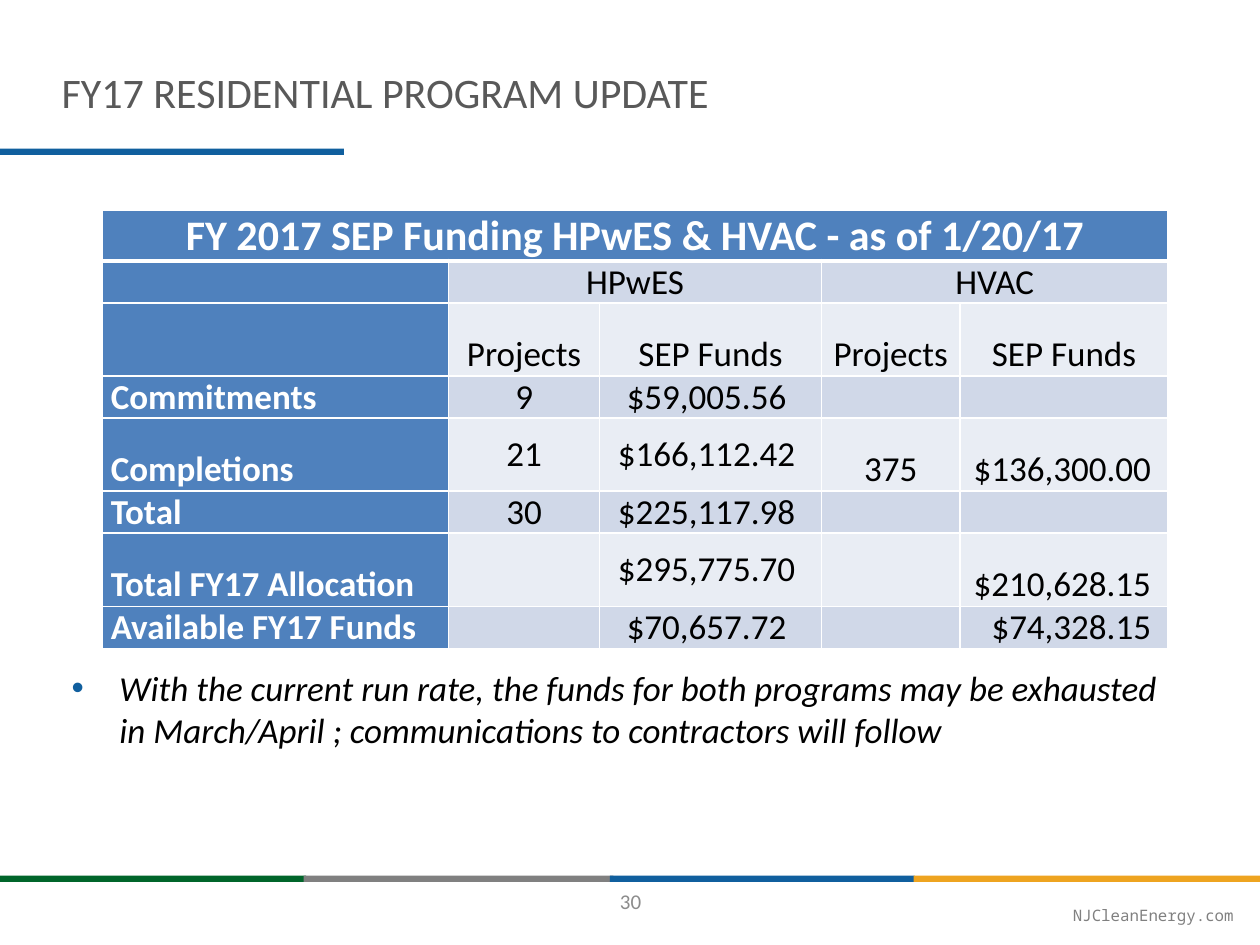
"""Build the FY17 residential program update slide."""
import lxml.etree
import pptx
import pptx.dml.color
import pptx.enum.shapes
import pptx.enum.text
import pptx.oxml
import pptx.oxml.ns
import pptx.util

Inches = pptx.util.Inches
Pt = pptx.util.Pt
RGB = pptx.dml.color.RGBColor.from_string
Align = pptx.enum.text.PP_ALIGN
Anchor = pptx.enum.text.MSO_ANCHOR

COLORS = {
    "green": "00652A", "gray": "808080", "blue": "105F9E", "orange": "EEA420",
    "title": "595959", "number": "8C8C8C", "black": "000000", "white": "FFFFFF",
    "header": "4F81BD", "band": "D0D8E8", "light": "E9EDF4",
}


def write(paragraph, text, size, color, alignment=Align.LEFT, **formats):
    run = paragraph.add_run()
    run.text = text
    paragraph.alignment = alignment
    values = {"name": "Calibri", "size": Pt(size), "bold": False} | formats
    for attribute, value in values.items():
        setattr(run.font, attribute, value)
    run.font.color.rgb = RGB(COLORS[color])


def add_border(cell, side, width):
    properties = cell._tc.get_or_add_tcPr()
    line = lxml.etree.SubElement(properties, pptx.oxml.ns.qn(f"a:ln{side}"), w=str(Pt(width)))
    fill = lxml.etree.SubElement(line, pptx.oxml.ns.qn("a:solidFill"))
    lxml.etree.SubElement(fill, pptx.oxml.ns.qn("a:srgbClr"), val=COLORS["white"])


presentation = pptx.Presentation()
presentation.slide_width, presentation.slide_height = Inches(10), Inches(7.5)
slide = presentation.slides.add_slide(presentation.slide_layouts[6])

bars = [
    (0, 6.95, 2.43, "green"),
    (2.41, 6.95, 2.46, "gray"),
    (4.84, 6.95, 2.42, "blue"),
    (7.25, 6.95, 2.75, "orange"),
    (0, 1.18, 2.73, "blue"),
]
for left, top, width, color in bars:
    bar = slide.shapes.add_shape(
        pptx.enum.shapes.MSO_SHAPE.RECTANGLE,
        Inches(left), Inches(top), Inches(width), Inches(0.05))
    bar.shadow.inherit = False
    bar.fill.solid()
    bar.fill.fore_color.rgb = RGB(COLORS[color])
    bar.line.fill.background()

boxes = {
    "website": (-0.21, 7.16, 10, 0.17),
    "title": (0.39, 0.48, 6.28, 0.74),
    "number": (3.88, 6.95, 2.25, 0.4),
    "note": (0.47, 5.24, 9, 1),
}
frames = {}
for name, bounds in boxes.items():
    frames[name] = slide.shapes.add_textbox(*map(Inches, bounds)).text_frame
    frames[name].word_wrap = True

for side in ("left", "top", "right", "bottom"):
    setattr(frames["website"], f"margin_{side}", 0)
website = frames["website"].paragraphs[0]
website.line_spacing = 1.2
write(website, "NJCleanEnergy.com", 9, "gray", Align.RIGHT, name="Noto Sans Mono")

write(frames["title"].paragraphs[0], "FY17 RESIDENTIAL PROGRAM UPDATE", 24, "title")

frames["number"].vertical_anchor = Anchor.MIDDLE
write(frames["number"].paragraphs[0], "30", 12, "number", Align.CENTER)

note = frames["note"].paragraphs[0]
note_properties = note._p.get_or_add_pPr()
note_properties.set("marL", str(Inches(0.38)))
note_properties.set("indent", str(Inches(-0.38)))
namespace = pptx.oxml.ns.nsdecls("a")
for bullet in (
    f'<a:buClr {namespace}><a:srgbClr val="{COLORS["blue"]}"/></a:buClr>',
    f'<a:buFont {namespace} typeface="Arial"/>',
    f'<a:buChar {namespace} char="•"/>',
):
    note_properties.append(pptx.oxml.parse_xml(bullet))
write(note, "With the current run rate, the funds for both programs may be exhausted "
      "in March/April ; communications to contractors will follow", 20, "black", italic=True)

rows = [
    ["FY 2017 SEP Funding HPwES & HVAC - as of 1/20/17", "", "", "", ""],
    ["", "HPwES", "", "HVAC", ""],
    ["", "Projects", "SEP Funds", "Projects", "SEP Funds"],
    ["Commitments", "9", "$59,005.56 ", "", ""],
    ["Completions", "21", "$166,112.42 ", "375", "$136,300.00 "],
    ["Total", "30", "$225,117.98 ", "", ""],
    ["Total FY17 Allocation", "", "$295,775.70 ", "", "$210,628.15 "],
    ["Available FY17 Funds", "", "$70,657.72 ", "", "$74,328.15 "],
]
column_widths = [2.75, 1.2, 1.76, 1.1, 1.65]
tall_rows = (2, 4, 6)
table = slide.shapes.add_table(
    len(rows), len(column_widths), Inches(0.81), Inches(1.67), Inches(8.46), Inches(3.47)).table
for column, width in zip(table.columns, column_widths):
    column.width = Inches(width)

for row_index, texts in enumerate(rows):
    table.rows[row_index].height = Inches(0.58 if row_index in tall_rows else 0.33)
    for column_index, text in enumerate(texts):
        cell = table.cell(row_index, column_index)
        is_title = row_index == 0
        is_header = is_title or column_index == 0
        is_data = row_index >= 3
        margins = {"left": 0.07, "top": 0, "right": 0.07, "bottom": 0}
        for side, margin in margins.items():
            setattr(cell, f"margin_{side}", Inches(margin))
        for side in "LRTB":
            under_title = (row_index, side) in ((0, "B"), (1, "T"))
            add_border(cell, side, 3 if under_title else 1)
        band = "light" if row_index in tall_rows else "band"
        cell.fill.solid()
        cell.fill.fore_color.rgb = RGB(COLORS["header" if is_header else band])
        centered = is_data and column_index in (1, 2)
        cell.vertical_anchor = Anchor.MIDDLE if centered else Anchor.BOTTOM
        alignment = Align.CENTER
        if is_data and column_index in (0, 4):
            alignment = Align.LEFT if column_index == 0 else Align.RIGHT
        if text:
            write(cell.text_frame.paragraphs[0], text, 24 if is_title else 20,
                  "white" if is_header else "black", alignment, bold=is_header)

for row_index, first, last in ((0, 0, 4), (1, 1, 2), (1, 3, 4)):
    table.cell(row_index, first).merge(table.cell(row_index, last))

presentation.save("out.pptx")
